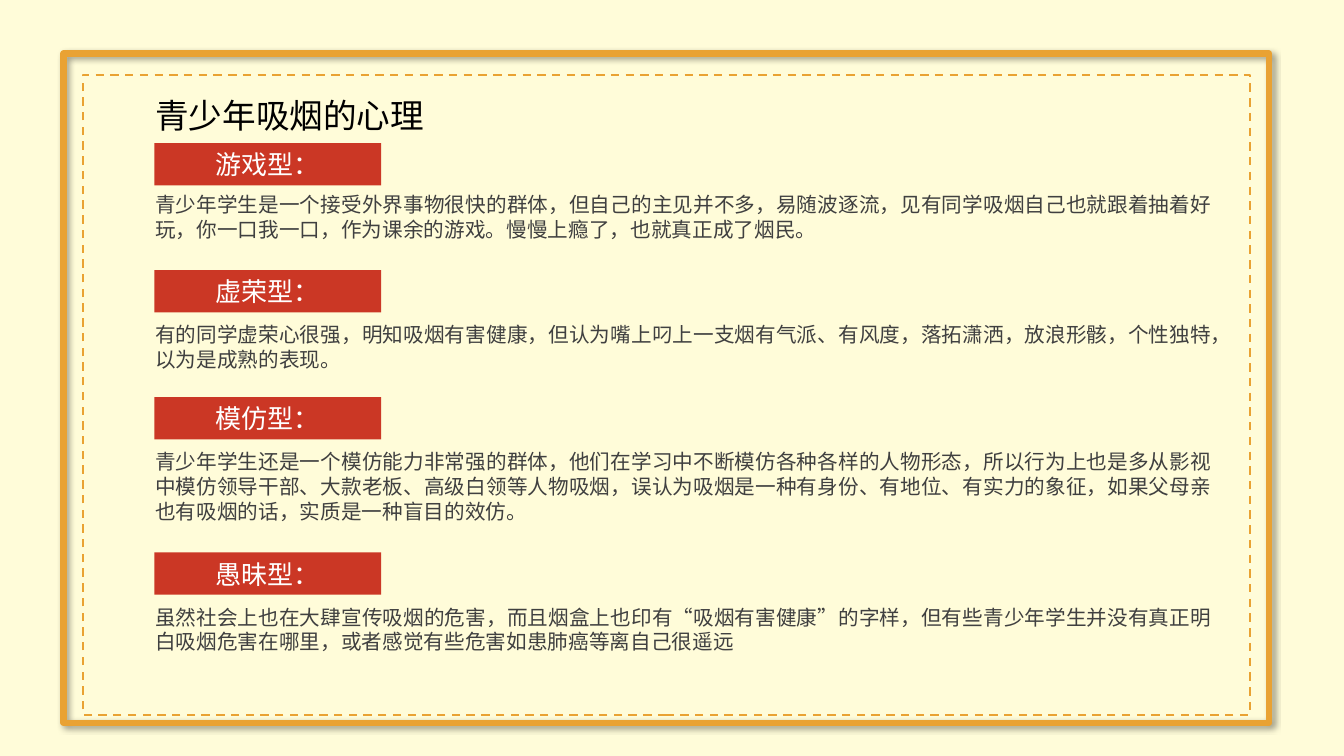
from lxml import etree
from pptx import Presentation
from pptx.dml.color import RGBColor
from pptx.enum.dml import MSO_LINE
from pptx.enum.lang import MSO_LANGUAGE_ID
from pptx.enum.shapes import MSO_SHAPE
from pptx.enum.text import MSO_ANCHOR, MSO_AUTO_SIZE, PP_ALIGN
from pptx.oxml import parse_xml
from pptx.oxml.ns import qn
from pptx.util import Pt

RECTANGLE = MSO_SHAPE.RECTANGLE
DASH = MSO_LINE.DASH
CHINESE = MSO_LANGUAGE_ID.SIMPLIFIED_CHINESE
TOP, MIDDLE = MSO_ANCHOR.TOP, MSO_ANCHOR.MIDDLE
NO_FIT, GROW = MSO_AUTO_SIZE.NONE, MSO_AUTO_SIZE.SHAPE_TO_FIT_TEXT
LEFT, CENTER, JUSTIFY = PP_ALIGN.LEFT, PP_ALIGN.CENTER, PP_ALIGN.JUSTIFY

COLORS = {"cream": "FFFCD9", "gold": "E9A233", "red": "CB3725",
          "white": "FFFFFF", "gray": "404040", "black": "000000"}
CJK_FONT = "Noto Sans CJK SC"

# Text formats: font, paragraph and frame values
TITLE = {"font": {"name": "Arial", "size": Pt(24), "bold": False}, "color": "black",
         "para": {"alignment": LEFT, "line_spacing": Pt(31)},
         "frame": {"word_wrap": False, "auto_size": NO_FIT, "vertical_anchor": TOP}}
LABEL = {"font": {"name": CJK_FONT, "size": Pt(18.6)}, "color": "white",
         "para": {"alignment": CENTER, "line_spacing": Pt(22.3)},
         "frame": {"word_wrap": True, "auto_size": NO_FIT, "vertical_anchor": MIDDLE}}
BODY = {"font": {"name": CJK_FONT, "size": Pt(14.7)}, "color": "gray",
        "para": {"alignment": JUSTIFY, "line_spacing": Pt(17.6)},
        "frame": {"word_wrap": True, "auto_size": GROW, "vertical_anchor": TOP}}

# Each section: top, distance from label to body, body height, label, body
SECTIONS = [
    (102.2, 31.7, 42.5, "游戏型：",
     "青少年学生是一个接受外界事物很快的群体，但自己的主见并不多，易随波逐流，"
     "见有同学吸烟自己也就跟着抽着好玩，你一口我一口，作为课余的游戏。"
     "慢慢上瘾了，也就真正成了烟民。"),
    (193, 33.8, 42.5, "虚荣型：",
     "有的同学虚荣心很强，明知吸烟有害健康，但认为嘴上叼上一支烟有气派、有风度，"
     "落拓潇洒，放浪形骸，个性独特，以为是成熟的表现。"),
    (283.7, 33.8, 60.5, "模仿型：",
     "青少年学生还是一个模仿能力非常强的群体，他们在学习中不断模仿各种各样的人物形态，"
     "所以行为上也是多从影视中模仿领导干部、大款老板、高级白领等人物吸烟，"
     "误认为吸烟是一种有身份、有地位、有实力的象征，如果父母亲也有吸烟的话，"
     "实质是一种盲目的效仿。"),
    (394.6, 33.8, 42.5, "愚昧型：",
     "虽然社会上也在大肆宣传吸烟的危害，而且烟盒上也印有“吸烟有害健康”的字样，"
     "但有些青少年学生并没有真正明白吸烟危害在哪里，或者感觉有些危害如患肺癌等离自己很遥远"),
]


def rgb(name):
    return RGBColor.from_string(COLORS[name])


def points(*values):
    return [Pt(value) for value in values]


def set_values(target, values):
    for key, value in values.items():
        setattr(target, key, value)


def write(shape, text, style):
    frame = shape.text_frame
    set_values(frame, style["frame"])
    para = frame.paragraphs[0]
    set_values(para, {**style["para"], "space_before": Pt(0)})
    span = para.add_run()
    span.text = text
    set_values(span.font, {**style["font"], "language_id": CHINESE})
    span.font.color.rgb = rgb(style["color"])
    east_asian = etree.SubElement(span.font._element, qn("a:ea"))
    east_asian.set("typeface", CJK_FONT)


def add_shadow(shape):
    effects = parse_xml(
        '<a:effectLst xmlns:a="http://schemas.openxmlformats.org/drawingml/2006/main">'
        '<a:outerShdw blurRad="50800" dist="38100" dir="2700000" algn="tl" rotWithShape="0">'
        f'<a:srgbClr val="{COLORS["black"]}"><a:alpha val="40000"/></a:srgbClr>'
        '</a:outerShdw></a:effectLst>')
    properties = shape._element.spPr
    properties.replace(properties.find(qn("a:effectLst")), effects)


def add_border(page, left, top, width, height, weight):
    border = page.shapes.add_shape(RECTANGLE, *points(left, top, width, height))
    border.shadow.inherit = False
    border.fill.background()
    border.line.color.rgb = rgb("gold")
    border.line.width = Pt(weight)
    return border


def add_frame(page, left, top, width, height):
    # Solid outer border with a shadow, dashed inner border
    add_shadow(add_border(page, left, top, width, height, 4.5))
    inner = add_border(page, left + 13.6, top + 15.1, width - 27.3, height - 20.9, 1.5)
    inner.line.dash_style = DASH


def add_title(page, left, top, width, height):
    title = page.shapes.title
    box = dict(zip(("left", "top", "width", "height"), points(left, top, width, height)))
    set_values(title, box)
    write(title, "青少年吸烟的心理", TITLE)


def add_section(page, left, top, width, gap, height, label, body):
    # Red label
    tag = page.shapes.add_shape(RECTANGLE, *points(left + 6.5, top, 162, 30.2))
    tag.shadow.inherit = False
    tag.fill.solid()
    tag.fill.fore_color.rgb = rgb("red")
    tag.line.fill.background()
    write(tag, label, LABEL)
    # Explanation below it
    box = page.shapes.add_textbox(*points(left, top + gap, width, height))
    write(box, body, BODY)


def build_page(deck):
    page = deck.slides.add_slide(deck.slide_layouts[5])
    page.background.fill.solid()
    page.background.fill.fore_color.rgb = rgb("cream")
    add_title(page, 103.7, 61.9, 208, 36)
    add_frame(page, 45.4, 38.2, 861.1, 478.1)
    for top, gap, height, label, body in SECTIONS:
        add_section(page, 103.7, top, 768.2, gap, height, label, body)


def main():
    deck = Presentation()
    deck.slide_width, deck.slide_height = points(960, 540)
    build_page(deck)
    deck.save("out.pptx")


if __name__ == "__main__":
    main()
